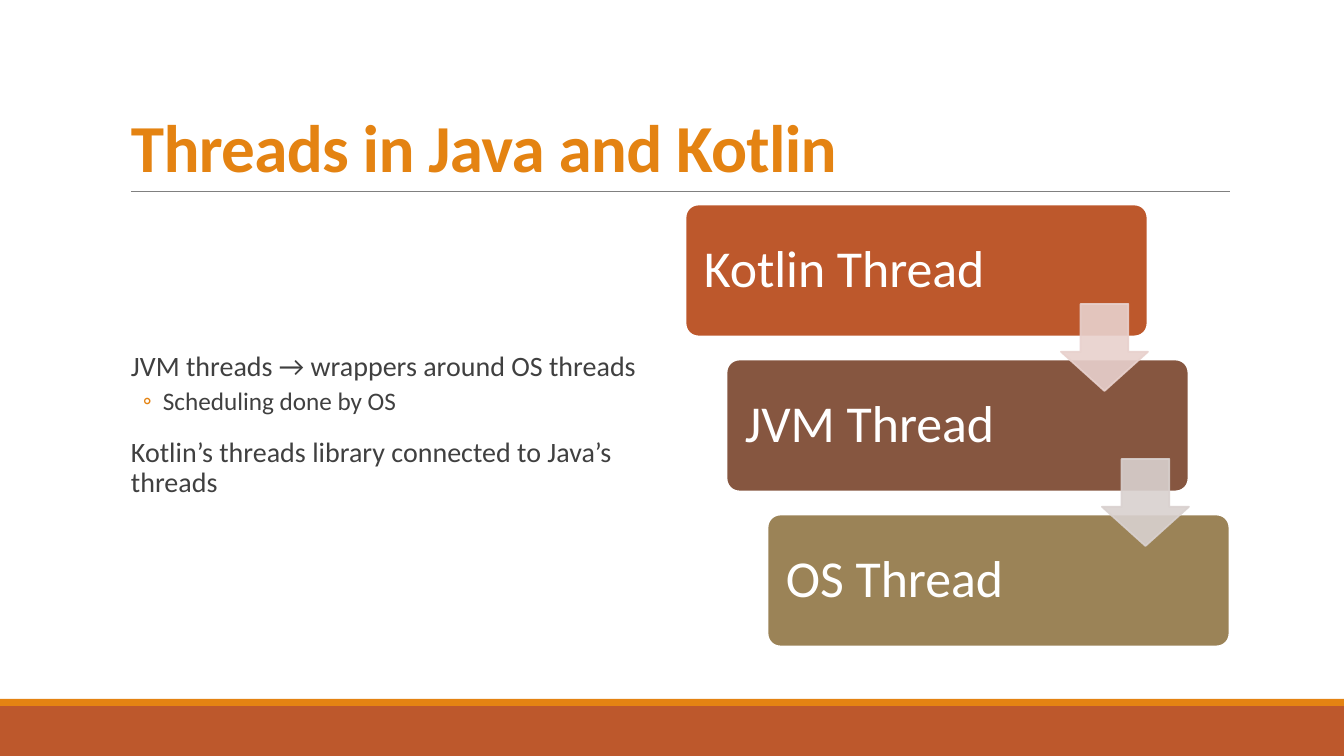
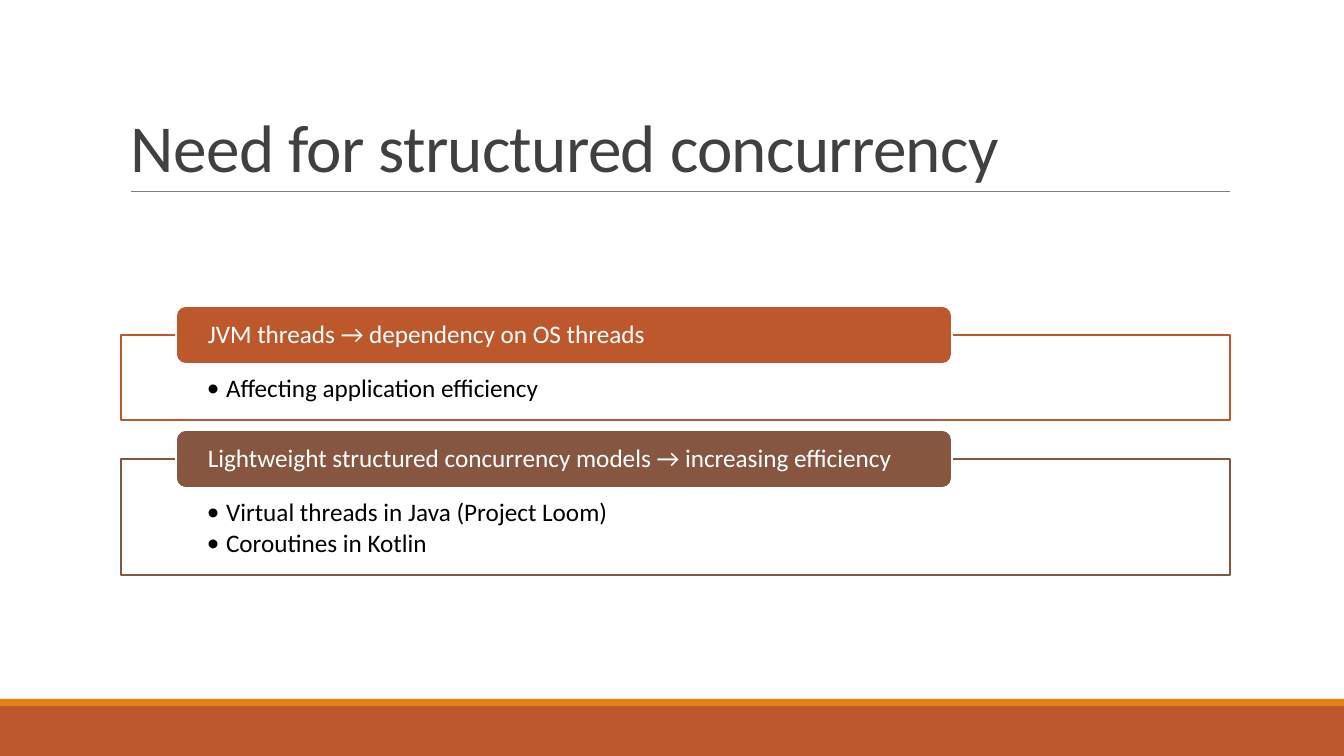
from dataclasses import dataclass

from lxml import etree
from pptx import Presentation
from pptx.dml.color import RGBColor
from pptx.enum.shapes import MSO_CONNECTOR, MSO_SHAPE
from pptx.enum.text import MSO_ANCHOR, PP_ALIGN
from pptx.oxml.ns import qn
from pptx.util import Pt

EMU_PER_PX = 12192000 / 1344
SLIDE_WIDTH, SLIDE_HEIGHT = 1344, 756

RECTANGLE = MSO_SHAPE.RECTANGLE
ROUNDED = MSO_SHAPE.ROUNDED_RECTANGLE
DOWN_ARROW = MSO_SHAPE.DOWN_ARROW
STRAIGHT = MSO_CONNECTOR.STRAIGHT
TOP, MIDDLE, BOTTOM = MSO_ANCHOR.TOP, MSO_ANCHOR.MIDDLE, MSO_ANCHOR.BOTTOM
LEFT = PP_ALIGN.LEFT

FONT = "Calibri"
RUST, BROWN, OLIVE, ORANGE = "BD582C", "865640", "9B8357", "E48312"
WHITE, BLACK, DARK, GRAY = "FFFFFF", "000000", "404040", "808080"

CONTENT_LEFT, CONTENT_WIDTH = 121, 1109


@dataclass(frozen=True)
class Box:
    left: int
    top: int
    width: int
    height: int


@dataclass(frozen=True)
class TextStyle:
    size: int
    color: str
    bold: bool = False
    line_spacing: float = 0.9
    before: float = 0
    after: float = 0
    tracking: int = 0
    margin: int = 0
    hanging: int = 0
    bullet: str = ""
    bullet_color: str = BLACK


@dataclass(frozen=True)
class Line:
    text: str
    style: TextStyle


@dataclass(frozen=True)
class Step:
    label: str
    color: str
    arrow_color: str = ""


@dataclass(frozen=True)
class Panel:
    heading: str
    color: str
    points: tuple[str, ...]


BODY = TextStyle(20, DARK, before=12, after=2, margin=10)
SUB_BODY = TextStyle(18, DARK, before=2, after=4, margin=42, hanging=20,
                     bullet="◦", bullet_color=ORANGE)
STEP_LABEL = TextStyle(37, WHITE)
PANEL_HEADING = TextStyle(18, WHITE)
PANEL_POINT = TextStyle(18, BLACK, after=2.7, margin=19, hanging=19, bullet="•")

BODY_LINES = [
    Line("JVM threads → wrappers around OS threads", BODY),
    Line("Scheduling done by OS", SUB_BODY),
    Line("Kotlin’s threads library connected to Java’s threads", BODY),
]
STEPS = [
    Step("Kotlin Thread", RUST, "E8D1CD"),
    Step("JVM Thread", BROWN, "D9D1CF"),
    Step("OS Thread", OLIVE),
]
PANELS = [
    Panel("JVM threads → dependency on OS threads", RUST,
          ("Affecting application efficiency",)),
    Panel("Lightweight structured concurrency models → increasing efficiency", BROWN,
          ("Virtual threads in Java (Project Loom)", "Coroutines in Kotlin")),
]


def px(length: float) -> int:
    return round(length * EMU_PER_PX)


def rgb(color: str) -> RGBColor:
    return RGBColor.from_string(color)


def set_all(target, values: dict) -> None:
    for name, value in values.items():
        setattr(target, name, value)


def place(box: Box) -> tuple[int, ...]:
    return tuple(px(v) for v in (box.left, box.top, box.width, box.height))


def add_bullet(properties, style: TextStyle) -> None:
    color = etree.SubElement(properties, qn("a:buClr"))
    etree.SubElement(color, qn("a:srgbClr"), val=style.bullet_color)
    etree.SubElement(properties, qn("a:buFont"), typeface=FONT)
    etree.SubElement(properties, qn("a:buChar"), char=style.bullet)


def write(shape, lines: list[Line], anchor, insets: tuple[int, int, int, int]) -> None:
    """Fill a shape with paragraphs; insets run left, top, right, bottom."""
    frame = shape.text_frame
    sides = ("margin_left", "margin_top", "margin_right", "margin_bottom")
    set_all(frame, {"word_wrap": True, "vertical_anchor": anchor,
                    **{side: px(inset) for side, inset in zip(sides, insets)}})
    for index, line in enumerate(lines):
        style = line.style
        paragraph = frame.add_paragraph() if index else frame.paragraphs[0]
        set_all(paragraph, {"alignment": LEFT, "line_spacing": style.line_spacing,
                            "space_before": Pt(style.before),
                            "space_after": Pt(style.after)})
        properties = paragraph._p.get_or_add_pPr()
        properties.set("marL", str(px(style.margin)))
        properties.set("indent", str(-px(style.hanging)))
        if style.bullet:
            add_bullet(properties, style)
        run = paragraph.add_run()
        run.text = line.text
        set_all(run.font, {"name": FONT, "size": Pt(style.size), "bold": style.bold})
        run.font.color.rgb = rgb(style.color)
        if style.tracking:
            run.font._element.set("spc", str(style.tracking))


def add_text(slide, box: Box, lines: list[Line], anchor, insets) -> None:
    write(slide.shapes.add_textbox(*place(box)), lines, anchor, insets)


def add_block(slide, kind, box: Box, fill: str, outline: str = "",
              outline_width: float = 1.25, adjustments: tuple[float, ...] = ()):
    shape = slide.shapes.add_shape(kind, *place(box))
    shape.shadow.inherit = False
    shape.fill.solid()
    shape.fill.fore_color.rgb = rgb(fill)
    if outline:
        shape.line.color.rgb = rgb(outline)
        shape.line.width = Pt(outline_width)
    else:
        shape.line.fill.background()
    for index, value in enumerate(adjustments):
        shape.adjustments[index] = value
    return shape


def set_opacity(shape, percent: int) -> None:
    for color in shape._element.spPr.iter(qn("a:srgbClr")):
        etree.SubElement(color, qn("a:alpha"), val=str(percent * 1000))


def add_base_slide(presentation, title: str, color: str, bold: bool = False):
    """Blank slide with the shared footer bands, title and title rule."""
    slide = presentation.slides.add_slide(presentation.slide_layouts[6])
    add_block(slide, RECTANGLE, Box(0, 706, SLIDE_WIDTH, 50), RUST)
    add_block(slide, RECTANGLE, Box(0, 699, SLIDE_WIDTH, 7), ORANGE)
    rule = slide.shapes.add_connector(STRAIGHT, px(131), px(191), px(1230), px(191))
    rule.line.color.rgb = rgb(GRAY)
    rule.line.width = Pt(0.5)
    etree.SubElement(rule._element.spPr, qn("a:effectLst"))
    style = TextStyle(48, color, bold=bold, line_spacing=0.85, tracking=-50)
    add_text(slide, Box(CONTENT_LEFT, 31, CONTENT_WIDTH, 160), [Line(title, style)],
             BOTTOM, (10, 5, 10, 5))
    return slide


def add_staircase(slide, steps: list[Step]) -> None:
    shift, pitch = 41, 155
    for index, step in enumerate(steps):
        box = Box(685 + index * shift, 204 + index * pitch, 463, 133)
        block = add_block(slide, ROUNDED, box, step.color, WHITE, 2, (0.1,))
        write(block, [Line(step.label, STEP_LABEL)], MIDDLE, (15, 15, 15, 15))
    # Arrows lie over the steps they join
    for index, step in enumerate(steps):
        if step.arrow_color:
            box = Box(1061 + index * shift, 304 + index * pitch, 87, 87)
            arrow = add_block(slide, DOWN_ARROW, box, step.arrow_color,
                              step.arrow_color, adjustments=(0.55, 0.45))
            set_opacity(arrow, 90)


def add_panels(slide, panels: list[Panel]) -> None:
    top, gap, heading_height = 335, 39, 58
    for panel in panels:
        height = 54 + 31 * len(panel.points)
        frame = add_block(slide, RECTANGLE,
                          Box(CONTENT_LEFT, top, CONTENT_WIDTH, height),
                          WHITE, panel.color)
        write(frame, [Line(point, PANEL_POINT) for point in panel.points],
              TOP, (86, 41, 86, 14))
        heading = add_block(slide, ROUNDED,
                            Box(176, top - heading_height // 2, 776, heading_height),
                            panel.color, WHITE)
        write(heading, [Line(panel.heading, PANEL_HEADING)], MIDDLE, (29, 0, 29, 0))
        top += height + gap


def main() -> None:
    presentation = Presentation()
    set_all(presentation, {"slide_width": px(SLIDE_WIDTH),
                           "slide_height": px(SLIDE_HEIGHT)})

    # Thread layers
    slide = add_base_slide(presentation, "Threads in Java and Kotlin", ORANGE, bold=True)
    add_text(slide, Box(CONTENT_LEFT, 204, 544, 443), BODY_LINES, MIDDLE, (0, 5, 0, 5))
    add_staircase(slide, STEPS)

    # Reasons for structured concurrency
    slide = add_base_slide(presentation, "Need for structured concurrency", DARK)
    add_panels(slide, PANELS)

    presentation.save("out.pptx")


if __name__ == "__main__":
    main()
